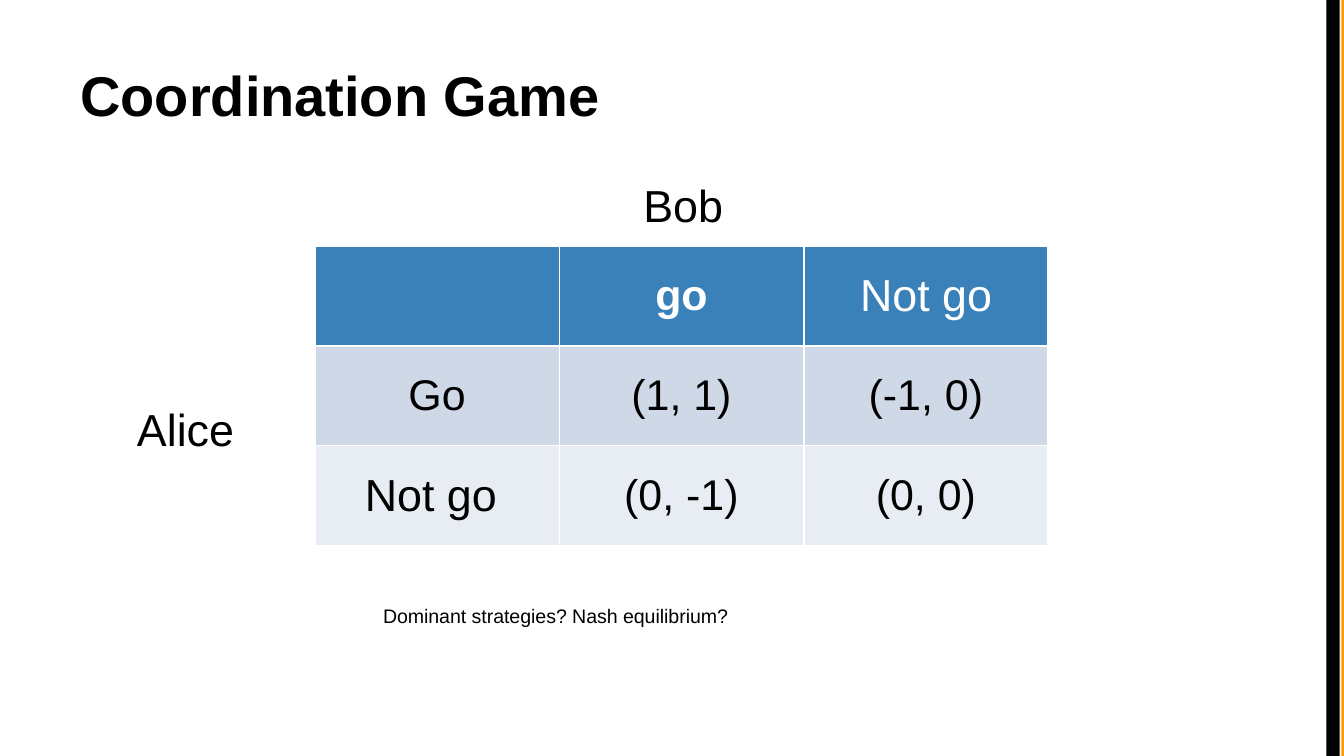
"""Build the Coordination Game payoff slide."""
from dataclasses import dataclass
from typing import NamedTuple

from lxml import etree
from pptx import Presentation
from pptx import util as u
from pptx.dml.color import RGBColor
from pptx.enum import shapes, text
from pptx.oxml import ns


@dataclass(frozen=True)
class Theme:
    font: str = "Arial"
    ink: str = "000000"
    paper: str = "FFFFFF"
    accent: str = "FF9900"
    row_fills: tuple = ("3A81BA", "CED8E7", "E8EDF3")
    title_size: float = 30
    label_size: float = 24
    cell_size: float = 23
    note_size: float = 10.5


class Box(NamedTuple):
    left: float
    top: float
    width: float
    height: float

    def lengths(self) -> list:
        return [u.Cm(value) for value in self]


class Label(NamedTuple):
    words: str
    box: Box
    size: float
    bold: bool = False
    inset: float = 0.13
    anchor: text.MSO_ANCHOR = text.MSO_ANCHOR.TOP


class Stripe(NamedTuple):
    box: Box
    color: str


class Entry(NamedTuple):
    words: str
    size: float
    bold: bool = False


THEME = Theme()
SLIDE_WIDTH, SLIDE_HEIGHT = 25.4, 14.29
STRIPES = [
    Stripe(Box(25.35, 0, 0.25, SLIDE_HEIGHT), THEME.accent),
    Stripe(Box(25.07, 0, 0.25, SLIDE_HEIGHT), THEME.ink),
]
LABELS = [
    Label("Coordination Game", Box(1.27, 0.58, 22.86, 2.39), THEME.title_size,
          True, 0.25, text.MSO_ANCHOR.MIDDLE),
    Label("Dominant strategies? Nash equilibrium?",
          Box(6.99, 11.28, 11.91, 0.71), THEME.note_size),
    Label("Alice", Box(2.34, 7.47, 3.23, 1.27), THEME.label_size),
    Label("Bob", Box(11.91, 3.23, 2.39, 1.27), THEME.label_size),
]
PAYOFF_BOX = Box(5.95, 4.65, 13.86, 5.66)
PAYOFFS = [
    [Entry("", THEME.cell_size), Entry("go", THEME.cell_size, True),
     Entry("Not go", THEME.label_size)],
    [Entry(words, THEME.cell_size) for words in ("Go", "(1, 1)", "(-1, 0)")],
    [Entry("Not go ", THEME.label_size), Entry("(0, -1)", THEME.cell_size),
     Entry("(0, 0)", THEME.cell_size)],
]


def apply(target, values: dict) -> None:
    """Set each named attribute on the target."""
    for name, value in values.items():
        setattr(target, name, value)


def write(paragraph, words: str, size: float, bold: bool, color: str) -> None:
    """Add one formatted run to a paragraph."""
    run = paragraph.add_run()
    run.text = words
    apply(run.font, {"name": THEME.font, "size": u.Pt(size), "bold": bold})
    run.font.color.rgb = RGBColor.from_string(color)


def paint(fill, color: str) -> None:
    """Give a fill one solid colour."""
    fill.solid()
    fill.fore_color.rgb = RGBColor.from_string(color)


def draw_stripe(slide, stripe: Stripe) -> None:
    """Draw a plain vertical stripe."""
    shape = slide.shapes.add_shape(shapes.MSO_SHAPE.RECTANGLE, *stripe.box.lengths())
    shape.shadow.inherit = False
    paint(shape.fill, stripe.color)
    shape.line.fill.background()


def draw_label(slide, label: Label) -> None:
    """Draw a left-aligned text box."""
    frame = slide.shapes.add_textbox(*label.box.lengths()).text_frame
    apply(frame, {
        "word_wrap": True,
        "vertical_anchor": label.anchor,
        "margin_top": u.Cm(label.inset),
        "margin_bottom": u.Cm(label.inset),
    })
    write(frame.paragraphs[0], label.words, label.size, label.bold, THEME.ink)


def draw_borders(cell, color: str) -> None:
    """Rule all four sides of a table cell."""
    properties = cell._tc.get_or_add_tcPr()
    for side in ("lnL", "lnR", "lnT", "lnB"):
        line = etree.SubElement(properties, ns.qn(f"a:{side}"), w=str(u.Pt(1)))
        fill = etree.SubElement(line, ns.qn("a:solidFill"))
        etree.SubElement(fill, ns.qn("a:srgbClr"), val=color)


def draw_payoffs(slide, box: Box, rows: list[list[Entry]]) -> None:
    """Draw the payoff table with one fill per row."""
    table = slide.shapes.add_table(len(rows), len(rows[0]), *box.lengths()).table
    for row_index, entries in enumerate(rows):
        color = THEME.ink if row_index else THEME.paper
        for column_index, entry in enumerate(entries):
            cell = table.cell(row_index, column_index)
            draw_borders(cell, THEME.paper)
            paint(cell.fill, THEME.row_fills[row_index])
            apply(cell, {
                "vertical_anchor": text.MSO_ANCHOR.MIDDLE,
                "margin_left": u.Cm(0.15),
                "margin_right": u.Cm(0.15),
                "margin_top": u.Cm(0.08),
                "margin_bottom": u.Cm(0.08),
            })
            paragraph = cell.text_frame.paragraphs[0]
            paragraph.alignment = text.PP_ALIGN.CENTER
            if entry.words:
                write(paragraph, entry.words, entry.size, entry.bold, color)


def main() -> None:
    """Assemble and save the slide."""
    presentation = Presentation()
    apply(presentation, {"slide_width": u.Cm(SLIDE_WIDTH),
                         "slide_height": u.Cm(SLIDE_HEIGHT)})
    slide = presentation.slides.add_slide(presentation.slide_layouts[6])
    paint(slide.background.fill, THEME.paper)
    for stripe in STRIPES:
        draw_stripe(slide, stripe)
    draw_payoffs(slide, PAYOFF_BOX, PAYOFFS)
    for label in LABELS:
        draw_label(slide, label)
    presentation.save("out.pptx")


if __name__ == "__main__":
    main()
